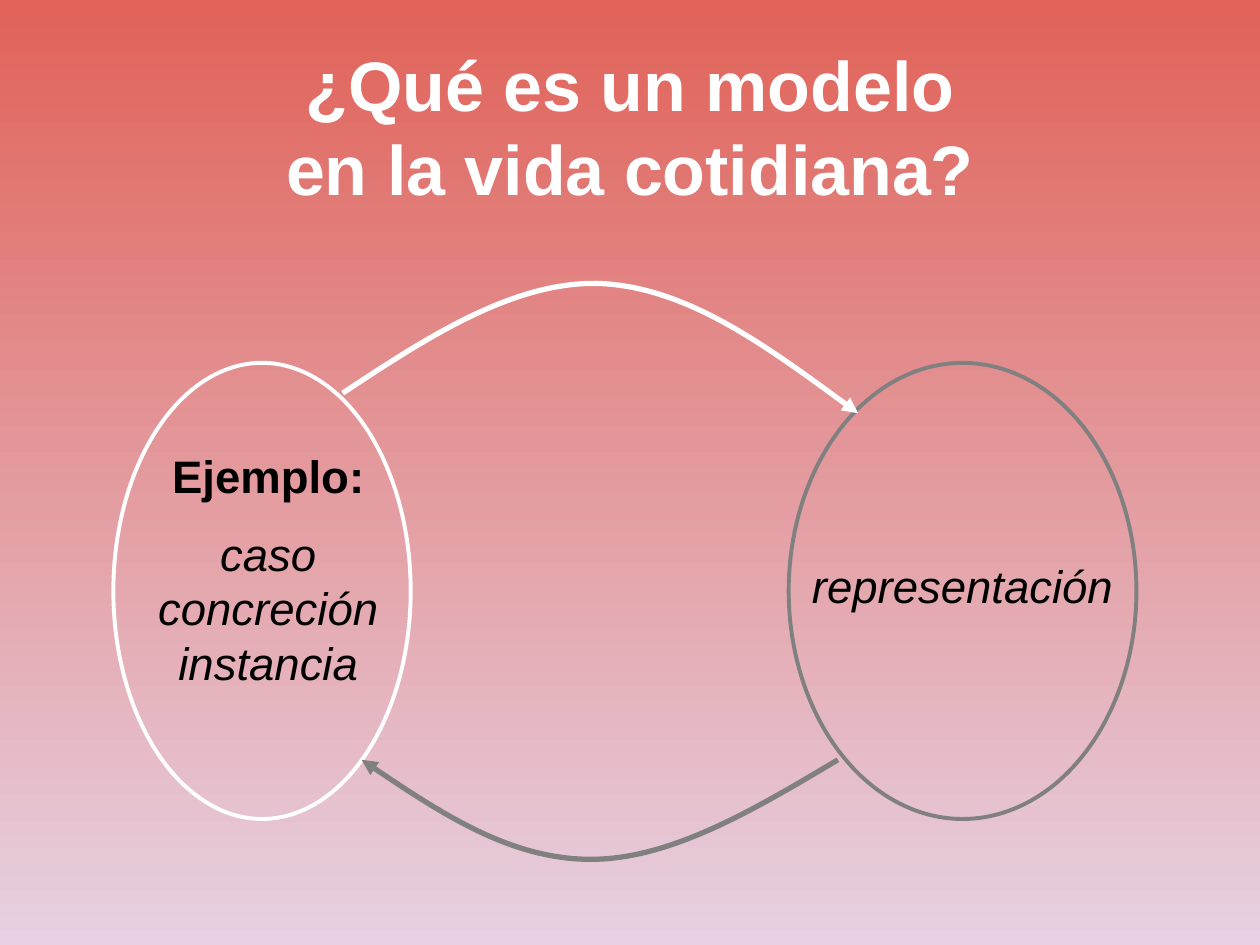
"""Build the slide on everyday models: an example and its representation."""
import pptx
import pptx.dml.color
import pptx.enum.shapes
import pptx.enum.text
import pptx.oxml
import pptx.oxml.ns
import pptx.util

SLIDE_WIDTH, SLIDE_HEIGHT = pptx.util.Inches(10), pptx.util.Inches(7.5)
COLUMNS, ROWS = 100, 75
WHITE, GRAY, BLACK = "FFFFFF", "808080", "000000"


def across(columns):
    """Return the length of a number of grid columns."""
    return round(SLIDE_WIDTH * columns / COLUMNS)


def down(rows):
    """Return the length of a number of grid rows."""
    return round(SLIDE_HEIGHT * rows / ROWS)


def cell(left, top, width, height):
    """Return the place of a grid area as left, top, width and height."""
    return across(left), down(top), across(width), down(height)


def paint(color_format, color):
    """Give a colour format a hex colour."""
    color_format.rgb = pptx.dml.color.RGBColor.from_string(color)


def outline(shape, color, weight):
    """Leave a shape hollow, with a plain coloured outline."""
    shape.shadow.inherit = False
    shape.fill.background()
    paint(shape.line.color, color)
    shape.line.width = pptx.util.Pt(weight)


def add_background(slide, top_color, bottom_color):
    """Fill the slide with a gradient running from top to bottom."""
    fill = slide.background.fill
    fill.gradient()
    fill.gradient_angle = 270
    for stop, color in zip(fill.gradient_stops, (top_color, bottom_color)):
        paint(stop.color, color)


def write(paragraph, text, size=26, color=BLACK, bold=False, italic=False, before=0):
    """Write centred text in a paragraph with the given format."""
    paragraph.text = text
    paragraph.alignment = pptx.enum.text.PP_ALIGN.CENTER
    paragraph.space_before = pptx.util.Pt(before)
    for run in paragraph.runs:
        run.font.name = "Arial"
        run.font.size = pptx.util.Pt(size)
        run.font.bold = bold
        run.font.italic = italic
        paint(run.font.color, color)


def add_text_frame(slide, area, anchor=pptx.enum.text.MSO_ANCHOR.TOP):
    """Add a wrapping text box and return its text frame."""
    frame = slide.shapes.add_textbox(*cell(*area)).text_frame
    frame.word_wrap = True
    frame.vertical_anchor = anchor
    return frame


def add_ellipse(slide, area, color):
    """Add a hollow ellipse."""
    oval = pptx.enum.shapes.MSO_SHAPE.OVAL
    outline(slide.shapes.add_shape(oval, *cell(*area)), color, 2.25)


def add_curved_arrow(slide, points, color):
    """Add an arrow along cubic curves: a start, then two controls and an end each."""
    start, *others = [(across(x), down(y)) for x, y in points]
    builder = slide.shapes.build_freeform(*start)
    builder.add_line_segments(others, close=False)
    arrow = builder.convert_to_shape()
    outline(arrow, color, 3)
    lines = list(arrow.element.iter(pptx.oxml.ns.qn("a:lnTo")))
    track = lines[0].getparent()
    for first in range(0, len(lines), 3):
        curve = track.makeelement(pptx.oxml.ns.qn("a:cubicBezTo"))
        track.append(curve)
        for line in lines[first:first + 3]:
            curve.append(line[0])
            track.remove(line)
    head = pptx.oxml.parse_xml(
        f'<a:tailEnd {pptx.oxml.ns.nsdecls("a")} type="triangle"/>')
    arrow.line._get_or_add_ln().append(head)


def main():
    """Compose the slide and save it."""
    deck = pptx.Presentation()
    deck.slide_width, deck.slide_height = SLIDE_WIDTH, SLIDE_HEIGHT
    slide = deck.slides.add_slide(deck.slide_layouts[6])
    add_background(slide, "E06258", "E7D1E2")

    title = add_text_frame(slide, (5, 3, 90, 14), pptx.enum.text.MSO_ANCHOR.MIDDLE)
    write(title.paragraphs[0], "¿Qué es un modelo\ven la vida cotidiana?",
          size=40, color=WHITE, bold=True)

    add_ellipse(slide, (9, 28.8, 23.6, 36.2), WHITE)
    add_ellipse(slide, (62.6, 28.8, 27.6, 36.2), GRAY)

    example = add_text_frame(slide, (8.3, 35.1, 26, 20.5))
    write(example.paragraphs[0], "Ejemplo:", bold=True)
    write(example.add_paragraph(), "caso concreción instancia", italic=True, before=13)
    representation = add_text_frame(slide, (63.4, 43.8, 26, 5.3))
    write(representation.paragraphs[0], "representación", italic=True)

    add_curved_arrow(slide, [(27.2, 31.2), (34, 26.7), (40.8, 22.3), (47.6, 22.5),
                             (54.5, 22.8), (61.3, 27.8), (68.1, 32.8)], WHITE)
    add_curved_arrow(slide, [(66.5, 60.3), (59.8, 64.3), (53.2, 68.2), (46.9, 68.2),
                             (40.6, 68.2), (34.6, 64.3), (28.7, 60.3)], GRAY)

    deck.save("out.pptx")


if __name__ == "__main__":
    main()
